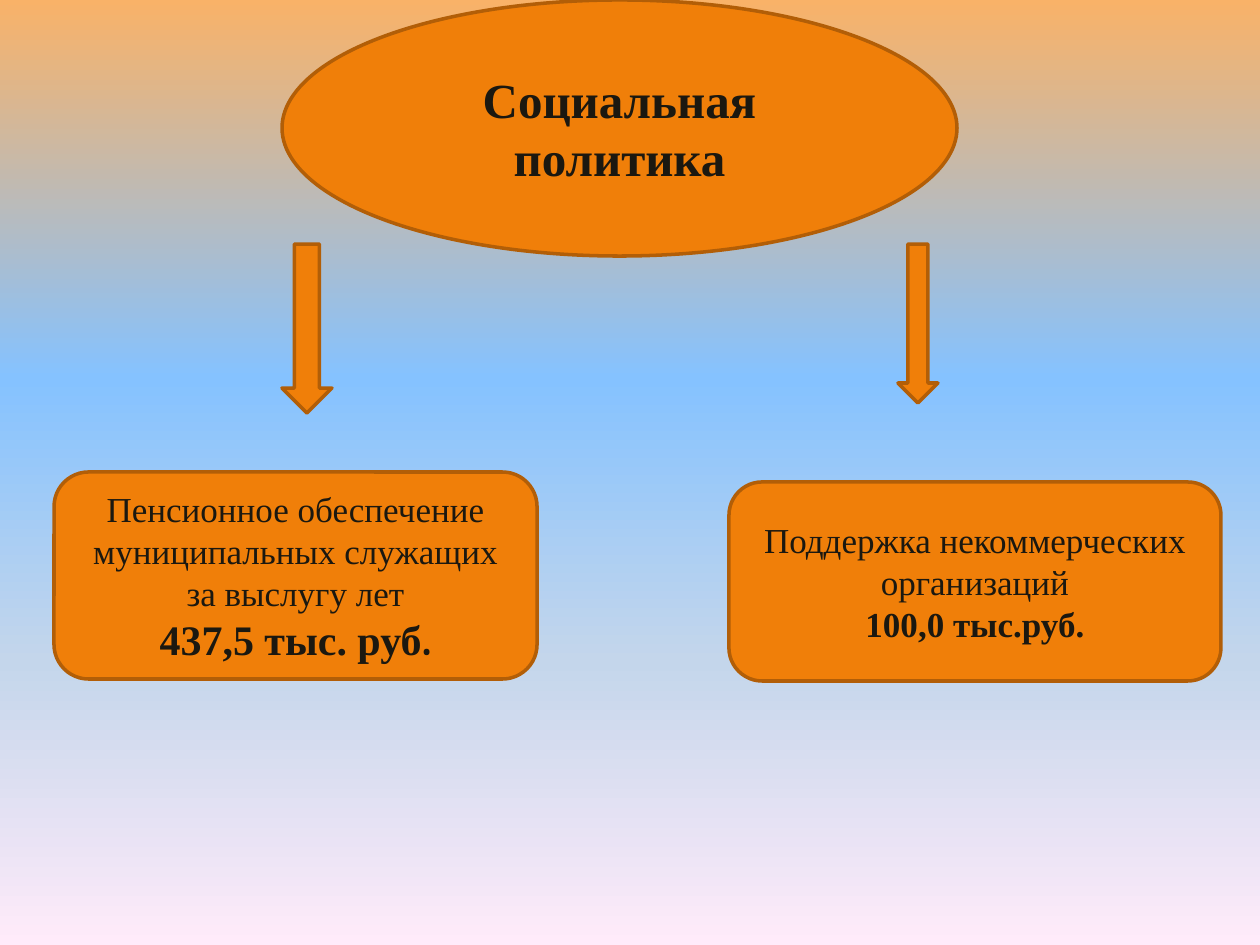
from copy import deepcopy
from typing import NamedTuple

from pptx import Presentation
from pptx.dml.color import RGBColor
from pptx.enum.shapes import MSO_SHAPE
from pptx.enum.text import MSO_ANCHOR, PP_ALIGN
from pptx.util import Emu, Pt

ORANGE = RGBColor(0xF0, 0x7F, 0x09)
BROWN = RGBColor(0xB2, 0x5E, 0x07)
INK = RGBColor(0x1B, 0x18, 0x10)
SKY = [
    (0, RGBColor(0xF9, 0xB2, 0x68)),
    (0.4, RGBColor(0x85, 0xC2, 0xFF)),
    (0.7, RGBColor(0xC4, 0xD6, 0xEB)),
    (1, RGBColor(0xFF, 0xEB, 0xFA)),
]
SERIF = "Times New Roman"


class Box(NamedTuple):
    kind: MSO_SHAPE
    left: int
    top: int
    width: int
    height: int


TITLE = Box(MSO_SHAPE.OVAL, 282, 0, 675, 256)
PENSION = Box(MSO_SHAPE.ROUNDED_RECTANGLE, 54, 472, 483, 207)
SUPPORT = Box(MSO_SHAPE.ROUNDED_RECTANGLE, 729, 482, 492, 199)
ARROWS = [
    Box(MSO_SHAPE.DOWN_ARROW, 282, 244, 50, 169),
    Box(MSO_SHAPE.DOWN_ARROW, 898, 244, 40, 159),
]


def px(count: int) -> Emu:
    return Emu(round(count * 914400 / 126))


def paint(slide) -> None:
    """Fill the background with the vertical gradient."""
    fill = slide.background.fill
    fill.gradient()
    fill.gradient_angle = 270
    stops = slide.element.xpath(".//a:gsLst")[0]
    while len(stops) < len(SKY):
        stops.append(deepcopy(stops[0]))
    for stop, (place, color) in zip(fill.gradient_stops, SKY):
        stop.position = place
        stop.color.rgb = color


def draw(slide, box: Box):
    shape = slide.shapes.add_shape(box.kind, *map(px, box[1:]))
    shape.shadow.inherit = False
    shape.fill.solid()
    shape.fill.fore_color.rgb = ORANGE
    shape.line.color.rgb = BROWN
    shape.line.width = Pt(2)
    frame = shape.text_frame
    frame.word_wrap = True
    frame.vertical_anchor = MSO_ANCHOR.MIDDLE
    frame.paragraphs[0].alignment = PP_ALIGN.CENTER
    return frame


def write(para, text: str, *, size: int = 20, bold: bool = False,
          face: str = SERIF) -> None:
    para.alignment = PP_ALIGN.CENTER
    run = para.add_run()
    run.text = text
    run.font.size = Pt(size)
    run.font.bold = bold
    run.font.name = face
    run.font.color.rgb = INK


def main() -> None:
    deck = Presentation()
    deck.slide_width, deck.slide_height = px(1260), px(945)
    slide = deck.slides.add_slide(deck.slide_layouts[6])
    paint(slide)

    title = draw(slide, TITLE)
    write(title.paragraphs[0], "Социальная политика", size=28, bold=True)

    pension = draw(slide, PENSION)
    write(pension.paragraphs[0],
          "Пенсионное обеспечение муниципальных служащих за выслугу лет")
    total = pension.add_paragraph()
    write(total, "437,5 тыс. руб", size=24, bold=True)
    write(total, ".", size=24, bold=True, face="Cambria")

    support = draw(slide, SUPPORT)
    write(support.paragraphs[0], "Поддержка некоммерческих организаций")
    write(support.add_paragraph(), "100,0 тыс.руб.", bold=True)

    for arrow in ARROWS:
        draw(slide, arrow)
    deck.save("out.pptx")


if __name__ == "__main__":
    main()
